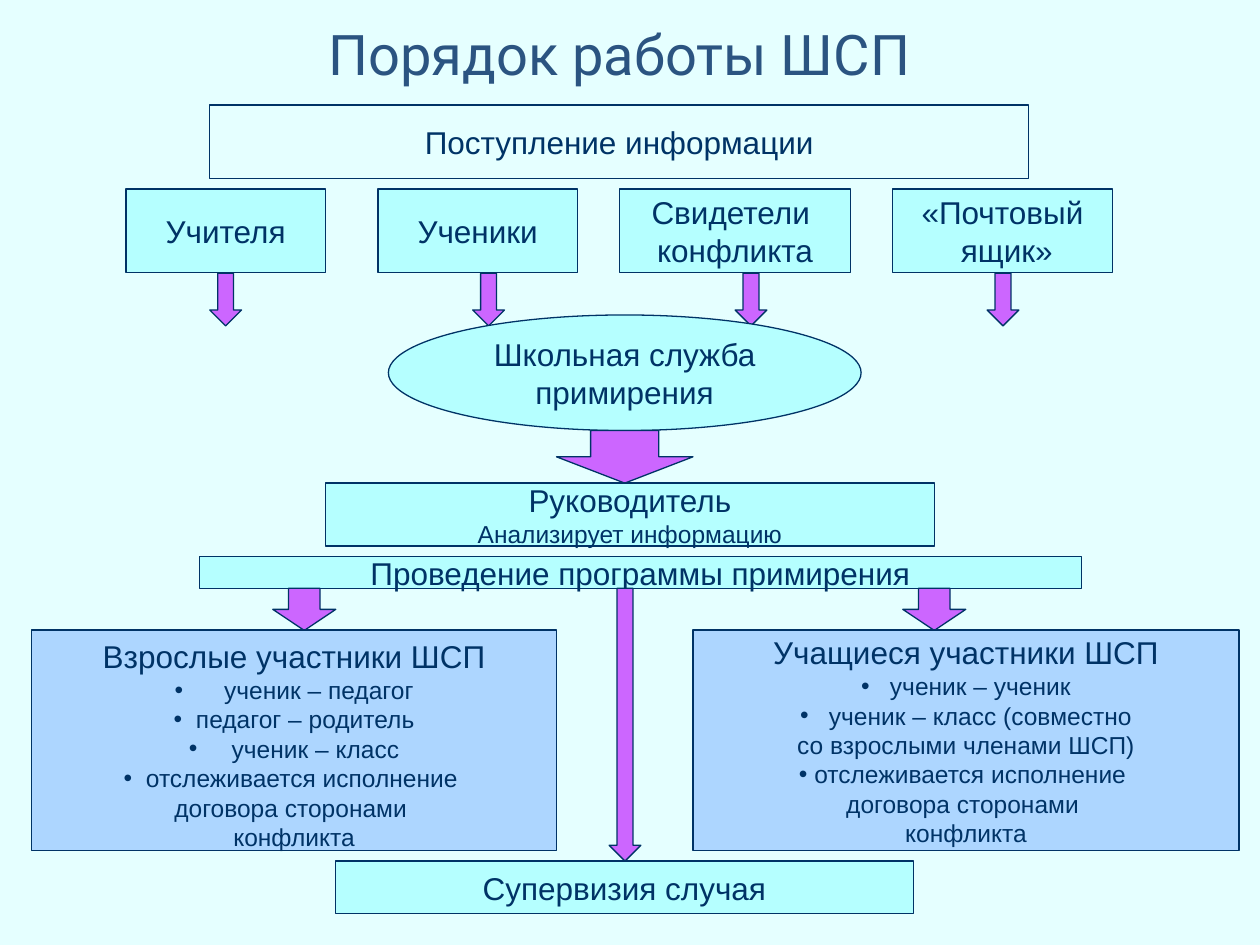
from dataclasses import dataclass

from lxml.etree import SubElement
from pptx import Presentation
from pptx.dml.color import RGBColor
from pptx.enum.shapes import MSO_SHAPE as Shape
from pptx.enum.text import MSO_ANCHOR as Anchor, MSO_AUTO_SIZE as AutoSize, PP_ALIGN as Align
from pptx.oxml.ns import qn
from pptx.util import Cm, Pt


@dataclass(frozen=True)
class Theme:
    paper: str = "E5FFFF"
    step: str = "B5FFFF"
    panel: str = "ADD6FF"
    arrow: str = "CC66FF"
    ink: str = "003366"
    heading: str = "2B5481"
    heading_font: str = "Roboto"
    body_font: str = "Arial"
    heading_size: int = 32
    step_size: int = 18
    detail_size: int = 14
    line_width: float = 0.75


@dataclass(frozen=True)
class Box:
    left: float
    top: float
    width: float
    height: float

    def inner(self, left, top, width, height):
        return Box(self.left + left, self.top + top, width, height)

    def lengths(self):
        return [Cm(side) for side in (self.left, self.top, self.width, self.height)]


@dataclass(frozen=True)
class Line:
    text: str
    size: int
    bullet_gap: float = 0


THEME = Theme()


def rgb(value):
    return RGBColor.from_string(value)


def step_lines(*texts):
    return [Line(text, THEME.step_size) for text in texts]


def detail(text, bullet_gap=0):
    return Line(text, THEME.detail_size, bullet_gap)


def add_bullet(paragraph, gap):
    properties = paragraph._p.get_or_add_pPr()
    properties.set("marL", str(Cm(gap)))
    properties.set("indent", str(-Cm(gap)))
    colour = SubElement(properties, qn("a:buClr"))
    SubElement(colour, qn("a:srgbClr")).set("val", THEME.ink)
    SubElement(properties, qn("a:buFont")).set("typeface", THEME.body_font)
    SubElement(properties, qn("a:buChar")).set("char", "•")


def write(frame, lines, font_name, colour):
    frame.word_wrap = True
    frame.auto_size = AutoSize.NONE
    frame.vertical_anchor = Anchor.MIDDLE
    frame.text = "\n".join(line.text for line in lines)
    for paragraph, line in zip(frame.paragraphs, lines):
        paragraph.alignment = Align.CENTER
        if line.bullet_gap:
            add_bullet(paragraph, line.bullet_gap)
        for run in paragraph.runs:
            run.font.name = font_name
            run.font.size = Pt(line.size)
            run.font.color.rgb = rgb(colour)


def add_block(slide, box, fill, lines=(), kind=Shape.RECTANGLE):
    block = slide.shapes.add_shape(kind, *box.lengths())
    block.shadow.inherit = False
    block.fill.solid()
    block.fill.fore_color.rgb = rgb(fill)
    block.line.color.rgb = rgb(THEME.ink)
    block.line.width = Pt(THEME.line_width)
    if lines:
        write(block.text_frame, lines, THEME.body_font, THEME.ink)
    return block


def add_arrow(slide, box):
    add_block(slide, box, THEME.arrow, kind=Shape.DOWN_ARROW)


def place_title(slide, box, text):
    title = slide.shapes.title
    title.left, title.top, title.width, title.height = box.lengths()
    write(title.text_frame, [Line(text, THEME.heading_size)], THEME.heading_font, THEME.heading)


def place_intake(slide, box):
    add_block(slide, box.inner(1.69, 0, 16.51, 1.48), THEME.paper,
              step_lines("Поступление информации"))
    sources = [
        (0, 4.02, 1.69, ["Учителя"]),
        (5.08, 4.02, 6.99, ["Ученики"]),
        (9.95, 4.66, 12.28, ["Свидетели ", "конфликта"]),
        (15.45, 4.44, 17.36, ["«Почтовый", " ящик»"]),
    ]
    for left, width, arrow_left, texts in sources:
        add_arrow(slide, box.inner(arrow_left, 3.39, 0.64, 1.06))
        add_block(slide, box.inner(left, 1.69, width, 1.69), THEME.step, step_lines(*texts))


def place_service(slide, box):
    add_block(slide, box.inner(1.27, 0, 9.53, 2.33), THEME.step,
              step_lines("Школьная служба", "примирения"), Shape.OVAL)
    add_arrow(slide, box.inner(4.66, 2.33, 2.75, 1.06))
    add_block(slide, box.inner(0, 3.39, box.width, 1.27), THEME.step,
              step_lines("Руководитель") + [detail("Анализирует информацию")])


def place_programme(slide, box):
    add_block(slide, box.inner(0, 0, box.width, 0.64), THEME.step,
              step_lines("Проведение программы примирения"))
    for left in (1.48, 14.18):
        add_arrow(slide, box.inner(left, 0.64, 1.27, 0.85))


def place_participants(slide, box, heading, details, top_margin=0.13):
    panel = add_block(slide, box, THEME.panel, step_lines(heading) + details)
    panel.text_frame.margin_top = Cm(top_margin)


def place_supervision(slide, box):
    add_arrow(slide, box.inner(5.51, 0, 0.64, 5.5))
    add_block(slide, box.inner(0, 5.5, box.width, 1.06), THEME.step,
              step_lines("Супервизия случая"))


def main():
    deck = Presentation()
    deck.slide_width, deck.slide_height = Cm(25.4), Cm(19.05)
    slide = deck.slides.add_slide(deck.slide_layouts[5])
    slide.background.fill.solid()
    slide.background.fill.fore_color.rgb = rgb(THEME.paper)

    agreement = [detail("договора сторонами "), detail("конфликта")]
    adults = [
        detail("ученик – педагог", 1),
        detail("педагог – родитель", 0.45),
        detail("ученик – класс", 0.86),
        detail("отслеживается исполнение ", 0.45),
    ]
    pupils = [
        detail("ученик – ученик", 0.58),
        detail("ученик – класс (совместно", 0.58),
        detail("со взрослыми членами ШСП)"),
        detail("отслеживается исполнение ", 0.31),
    ]

    place_title(slide, Box(1.06, 0.64, 22.86, 0.85), "Порядок работы ШСП")
    place_intake(slide, Box(2.54, 2.12, 19.89, 4.45))
    place_service(slide, Box(6.56, 6.35, 12.28, 4.66))
    place_programme(slide, Box(4.02, 11.22, 17.78, 1.49))
    place_participants(slide, Box(0.64, 12.7, 10.58, 4.45),
                       "Взрослые участники ШСП", adults + agreement, 0.28)
    place_participants(slide, Box(13.97, 12.7, 11.01, 4.45),
                       "Учащиеся участники ШСП", pupils + agreement)
    place_supervision(slide, Box(6.77, 11.86, 11.64, 6.56))
    deck.save("out.pptx")


if __name__ == "__main__":
    main()
